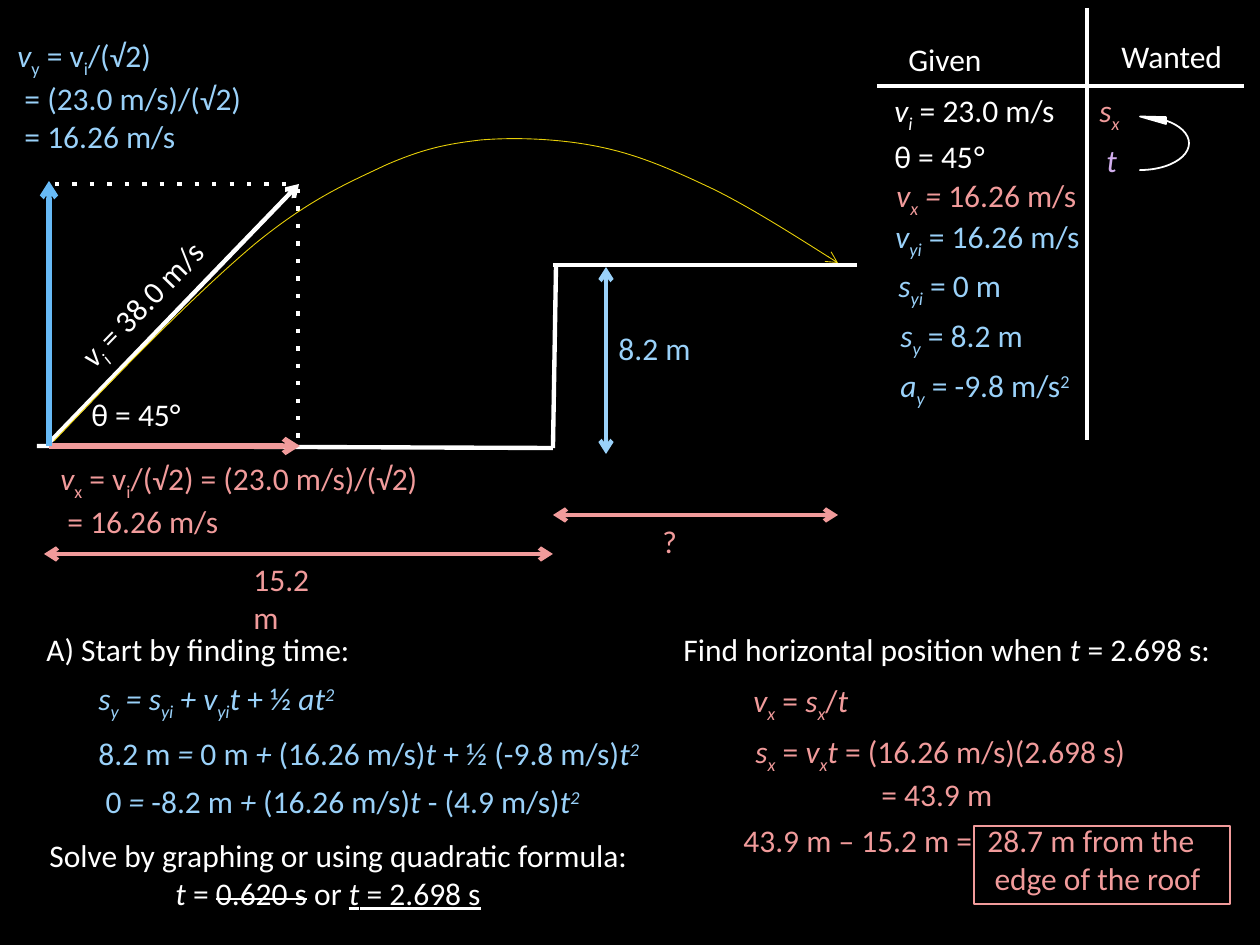
"""Build the projectile motion worked example slide."""
from lxml.etree import SubElement
from pptx import Presentation
from pptx.dml.color import RGBColor
from pptx.enum.shapes import MSO_CONNECTOR, MSO_SHAPE
from pptx.enum.text import MSO_AUTO_SIZE
from pptx.oxml.ns import qn
from pptx.util import Pt

EMU_PER_PX = 914400 / 126
FONT = "Calibri"
BLACK = RGBColor(0x00, 0x00, 0x00)
WHITE = RGBColor(0xFF, 0xFF, 0xFF)
PINK = RGBColor(0xF1, 0x9B, 0x9B)
SKY = RGBColor(0x9A, 0xD1, 0xF9)
BLUE = RGBColor(0x67, 0xBA, 0xF6)
LILAC = RGBColor(0xD1, 0xAE, 0xED)
YELLOW = RGBColor(0xE7, 0xCF, 0x08)


def emu(*lengths):
    """Turn px lengths into EMU."""
    return [round(n * EMU_PER_PX) for n in lengths]


def split_markup(text):
    """Split text at its toggles: * italic, _ sub, ^ super, ~ strike, | underline."""
    pieces, on, part = [], set(), ""
    for ch in text:
        if ch in "*_^~|":
            if part:
                pieces.append((part, frozenset(on)))
            on, part = on ^ {ch}, ""
        else:
            part += ch
    if part:
        pieces.append((part, frozenset(on)))
    return pieces


def add_rich_text(p, text, color=WHITE, size=18):
    """Add marked-up text to a paragraph as formatted runs."""
    for part, on in split_markup(text):
        r = p.add_run()
        r.text = part
        r.font.name, r.font.size = FONT, Pt(size)
        r.font.color.rgb = color
        if "*" in on:
            r.font.italic = True
        if "|" in on:
            r.font.underline = True
        rPr = r.font._element
        if "~" in on:
            rPr.set("strike", "sngStrike")
        if "_" in on:
            rPr.set("baseline", "-25000")
        if "^" in on:
            rPr.set("baseline", "30000")


class Sketch:
    """Hold the style and the current slide, and draw elements on it."""

    def __init__(self, slide):
        self.slide = slide
        self.shapes = slide.shapes
        bg = slide.background.fill
        bg.solid()
        bg.fore_color.rgb = BLACK

    def style_line(self, sp, color, weight, dash=None, head=False, tail=False):
        sp.line.color.rgb = color
        sp.line.width = Pt(weight)
        ln = sp.line._get_or_add_ln()
        if dash:
            SubElement(ln, qn("a:prstDash"), val=dash)
        if head:
            SubElement(ln, qn("a:headEnd"), type="arrow")
        if tail:
            SubElement(ln, qn("a:tailEnd"), type="arrow")

    def line(self, x1, y1, x2, y2, color=WHITE, weight=2.5, **ends):
        sp = self.shapes.add_connector(MSO_CONNECTOR.STRAIGHT, *emu(x1, y1, x2, y2))
        self.style_line(sp, color, weight, **ends)
        SubElement(sp._element.spPr, qn("a:effectLst"))

    def shape(self, kind, x, y, w, h, color, fill=None, rotation=0, adjust=()):
        sp = self.shapes.add_shape(kind, *emu(x, y, w, h))
        sp.shadow.inherit = False
        sp.rotation = rotation
        for i, value in enumerate(adjust):
            sp.adjustments[i] = value
        if fill is None:
            sp.fill.background()
        else:
            sp.fill.solid()
            sp.fill.fore_color.rgb = fill
        self.style_line(sp, color, 1)

    def curve(self, points, color, weight):
        builder = self.shapes.build_freeform(*points[0], scale=EMU_PER_PX)
        builder.add_line_segments(points[1:], close=False)
        sp = builder.convert_to_shape()
        sp.shadow.inherit = False
        sp.fill.background()
        self.style_line(sp, color, weight, tail=True)
        outline = next(sp._element.iter(qn("a:path")))
        segments = outline.findall(qn("a:lnTo"))
        for i in range(0, len(segments), 3):
            bezier = SubElement(outline, qn("a:cubicBezTo"))
            for segment in segments[i:i + 3]:
                bezier.append(segment[0])
                outline.remove(segment)

    def text(self, x, y, w, h, *lines, color=WHITE, wrap=False, rotation=0, tab=None):
        sp = self.shapes.add_textbox(*emu(x, y, w, h))
        sp.rotation = rotation
        tf = sp.text_frame
        tf.word_wrap = wrap
        tf.auto_size = MSO_AUTO_SIZE.SHAPE_TO_FIT_TEXT
        for i, line in enumerate(lines):
            p = tf.add_paragraph() if i else tf.paragraphs[0]
            if tab:
                tabs = SubElement(p._p.get_or_add_pPr(), qn("a:tabLst"))
                SubElement(tabs, qn("a:tab"), pos=str(emu(tab)[0]), algn="l")
            add_rich_text(p, line, color)


def draw_trajectory(s):
    """Draw the ground, roof, launch vector, its components and the path."""
    s.line(37, 446, 553, 448)
    s.line(48, 444, 299, 184, tail=True)
    s.text(48, 277, 189, 50, "*v_i_* = 38.0 m/s", rotation=314.2)
    s.text(79, 389, 116, 50, "θ = 45°")
    s.line(49, 446, 300, 446, PINK, 3, tail=True)
    s.line(298, 189, 298, 447, dash="dot")
    s.text(48, 453, 404, 89, "*v*_x_ = v_i_/(√2) = (23.0 m/s)/(√2)",
           " = 16.26 m/s", color=PINK, wrap=True)
    s.line(49, 446, 49, 181, BLUE, 3, tail=True)
    s.line(55, 184, 299, 184, dash="dot")
    s.text(5, 30, 251, 127, "*v*_y_ = v_i_/(√2)", " = (23.0 m/s)/(√2)",
           " = 16.26 m/s", color=SKY)
    s.line(44, 554, 553, 554, PINK, head=True, tail=True)
    s.text(241, 554, 108, 50, "15.2 m", color=PINK, wrap=True)
    s.line(553, 265, 857, 265)
    s.line(553, 448, 556, 267)
    s.curve([(54, 441), (126, 365), (199, 291), (255, 244), (310, 199), (348, 183),
             (386, 165), (423, 149), (446, 144), (481, 140), (517, 137), (562, 139),
             (600, 147), (639, 155), (673, 170), (713, 189), (752, 208), (838, 263),
             (838, 263)], YELLOW, 0.5)
    s.line(606, 267, 606, 454, SKY, head=True, tail=True)
    s.text(606, 323, 98, 50, "8.2 m", color=SKY)
    s.line(553, 515, 838, 515, PINK, head=True, tail=True)
    s.text(650, 516, 37, 50, "?", color=PINK)


def draw_given_wanted(s):
    """Draw the T-chart of given and wanted quantities."""
    s.line(1087, 8, 1087, 440)
    s.line(877, 86, 1244, 86)
    for x, y, w, label, color in [
        (896, 34, 101, "Given", WHITE),
        (1109, 31, 131, "Wanted", WHITE),
        (882, 85, 186, "*v_i_* = 23.0 m/s", WHITE),
        (882, 131, 116, "θ = 45*°*", WHITE),
        (884, 170, 205, "*v_x_ = *16.26 m/s", PINK),
        (883, 211, 220, "*v_yi_* = 16.26 m/s", SKY),
        (1087, 85, 50, "*s_x_*", PINK),
        (1094, 135, 40, "*t*", LILAC),
    ]:
        s.text(x, y, w, 50, label, color=color)
    for x, y, label in [
        (886, 260, "*s_yi_* = 0 m"),
        (888, 310, "*s_y_* = 8.2 m"),
        (888, 360, "*a_y_* = -9.8 m/s^2^"),
    ]:
        s.text(x, y, 205, 50, label, color=SKY, wrap=True)
    s.shape(MSO_SHAPE.CURVED_RIGHT_ARROW, 1140, 113, 49, 57, WHITE, fill=WHITE,
            rotation=180, adjust=(0, 0.14, 0.53))


def draw_solution(s):
    """Write the time and horizontal position solutions."""
    s.text(34, 624, 479, 50, "A) Start by finding time:", wrap=True)
    for y, w, equation in [
        (673, 281, "*s_y_ = s_yi_ + v_yi_t *+ ½ *at^2^*"),
        (728, 577, "8.2 m* = *0 m* + *(16.26 m/s)*t *+ ½ (-9.8 m/s)*t^2^*"),
        (776, 512, " 0 *= *-8.2 m* + *(16.26 m/s)*t *- (4.9 m/s)*t^2^*"),
    ]:
        s.text(86, y, w, 50, equation, color=SKY)
    s.text(37, 830, 650, 89, "Solve by graphing or using quadratic formula:",
           "\t*t* = ~0.620 s~ or |*t* = 2.698 s|", wrap=True, tab=126)
    s.text(671, 624, 582, 50, "Find horizontal position when *t* = 2.698 s:", wrap=True)
    s.text(741, 675, 129, 50, "*v_x_* = *s_x_*/*t*", color=PINK)
    s.text(743, 726, 500, 89, "*s_x_* = *v_x_t *= (16.26 m/s)(2.698 s)",
           "\t= 43.9 m", color=PINK, wrap=True, tab=126)
    s.text(731, 815, 509, 89, "43.9 m – 15.2 m =\t28.7 m from the",
           "\t edge of the roof", color=PINK, wrap=True, tab=244)
    s.shape(MSO_SHAPE.RECTANGLE, 974, 826, 256, 78, PINK)


def main():
    """Create the presentation and save it."""
    prs = Presentation()
    prs.slide_width, prs.slide_height = emu(1260, 945)
    s = Sketch(prs.slides.add_slide(prs.slide_layouts[6]))
    draw_trajectory(s)
    draw_given_wanted(s)
    draw_solution(s)
    prs.save("out.pptx")


if __name__ == "__main__":
    main()
